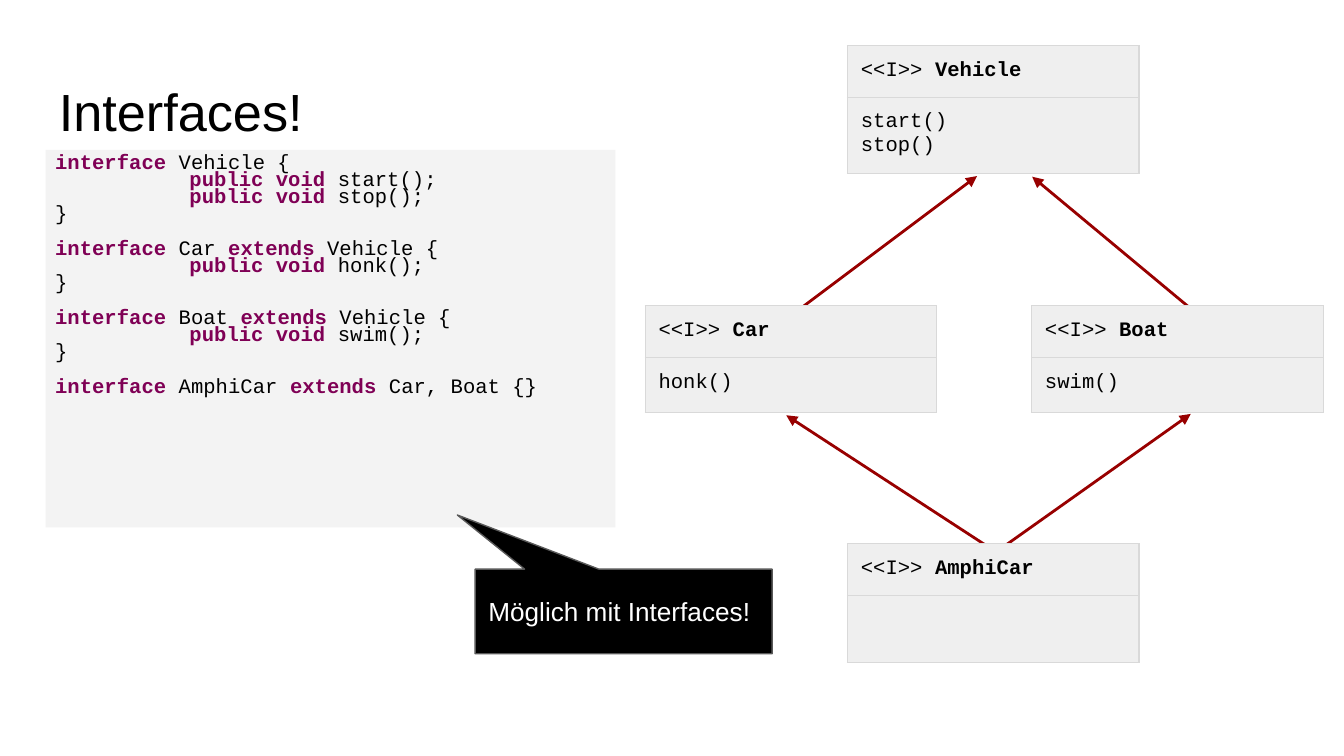
from lxml.etree import SubElement
from pptx import Presentation
from pptx.dml.color import RGBColor
from pptx.enum.shapes import MSO_CONNECTOR, MSO_SHAPE
from pptx.enum.text import MSO_ANCHOR, PP_ALIGN
from pptx.oxml.ns import qn
from pptx.util import Pt

PX = 4572  # EMU per px, 200 px to the inch

BLACK = RGBColor(0x00, 0x00, 0x00)
WHITE = RGBColor(0xFF, 0xFF, 0xFF)
KEYWORD = RGBColor(0x7F, 0x00, 0x55)
ARROW = RGBColor(0x98, 0x00, 0x00)
CODE_FILL = RGBColor(0xF3, 0xF3, 0xF3)
CLASS_FILL = RGBColor(0xEF, 0xEF, 0xEF)
CLASS_BORDER = RGBColor(0xD9, 0xD9, 0xD9)
CALLOUT_BORDER = RGBColor(0x59, 0x59, 0x59)

TITLE_FONT = {"name": "Arial", "size": Pt(28), "bold": False}
CALLOUT_FONT = {"name": "Arial", "size": Pt(14), "bold": False}
PLAIN_CODE = {"name": "Courier New", "size": Pt(11), "bold": False}
BOLD_CODE = {**PLAIN_CODE, "bold": True}
CODE_INDENT = 200

# Keywords stand between asterisks.
DECLARATIONS = [
    ["*interface* Vehicle {", "\t*public void* start();", "\t*public void* stop();", "}"],
    ["*interface* Car *extends* Vehicle {", "\t*public void* honk();", "}"],
    ["*interface* Boat *extends* Vehicle {", "\t*public void* swim();", "}"],
    ["*interface* AmphiCar *extends* Car, Boat {}"],
]

CLASS_WIDTH = 434
ROW_HEIGHTS = (42, 82)
FRAME_SIDE = 656
CLASSES = [
    (1261, 68, "Vehicle", ["start()", "stop()"]),
    (960, 455, "Car", ["honk()"]),
    (1535, 455, "Boat", ["swim()"]),
    (1261, 809, "AmphiCar", []),
]
ARROWS = [
    (1190, 460, 1454, 262),
    (1768, 456, 1536, 263),
    (1474, 816, 1170, 618),
    (1490, 816, 1772, 616),
]


def scaled(*lengths):
    return [length * PX for length in lengths]


def set_all(target, values):
    for name, value in values.items():
        setattr(target, name, value)


def add_span(para, text, font, color=BLACK):
    span = para.add_run()
    span.text = text
    set_all(span.font, font)
    span.font.color.rgb = color


def set_frame(frame, side, top, anchor=MSO_ANCHOR.TOP):
    """Wrap the text and set its insets, given in px."""
    set_all(frame, {
        "word_wrap": True, "vertical_anchor": anchor,
        "margin_left": side * PX, "margin_right": side * PX,
        "margin_top": top * PX, "margin_bottom": top * PX,
    })


def add_title(page, box, text):
    frame = page.shapes.add_textbox(*scaled(*box)).text_frame
    set_frame(frame, 20, 20)
    add_span(frame.paragraphs[0], text, TITLE_FONT)


def add_code(page, box, declarations):
    panel = page.shapes.add_textbox(*scaled(*box))
    panel.fill.solid()
    panel.fill.fore_color.rgb = CODE_FILL
    frame = panel.text_frame
    set_frame(frame, 14, 8)
    for index, lines in enumerate(declarations):
        para = frame.add_paragraph() if index else frame.paragraphs[0]
        set_all(para, {"line_spacing": 0.7, "space_before": Pt(9.25 if index else 0)})
        tabs = SubElement(para._p.get_or_add_pPr(), qn("a:tabLst"))
        SubElement(tabs, qn("a:tab"), pos=str(CODE_INDENT * PX), algn="l")
        for number, line in enumerate(lines):
            if number:
                para.add_line_break()
            for part, text in enumerate(line.split("*")):
                if text and part % 2:
                    add_span(para, text, BOLD_CODE, KEYWORD)
                elif text:
                    add_span(para, text, PLAIN_CODE)


def add_arrow(page, ends):
    arrow = page.shapes.add_connector(MSO_CONNECTOR.STRAIGHT, *scaled(*ends))
    arrow.line.color.rgb = ARROW
    arrow.line.width = Pt(1.5)
    SubElement(arrow.line._get_or_add_ln(), qn("a:tailEnd"), type="triangle")
    SubElement(arrow._element.spPr, qn("a:effectLst"))


def style_cell(cell):
    properties = cell._tc.get_or_add_tcPr()
    for side in ("a:lnL", "a:lnR", "a:lnT", "a:lnB"):
        border = SubElement(properties, qn(side), w=str(Pt(0.75)))
        fill = SubElement(border, qn("a:solidFill"))
        SubElement(fill, qn("a:srgbClr"), val=str(CLASS_BORDER))
    cell.fill.solid()
    cell.fill.fore_color.rgb = CLASS_FILL
    for side in ("left", "right", "top", "bottom"):
        setattr(cell, f"margin_{side}", 20 * PX)


def add_class(page, left, top, name, methods):
    """Place a class box: its name above its methods."""
    box = scaled(left, top, CLASS_WIDTH, sum(ROW_HEIGHTS))
    holder = page.shapes.add_table(2, 1, *box)
    table = holder.table
    set_all(table, {"first_row": False, "horz_banding": False})
    for row, height in zip(table.rows, ROW_HEIGHTS):
        row.height = height * PX
        style_cell(row.cells[0])
    # The frame is larger than its rows, so they keep their natural heights.
    set_all(holder, {"width": FRAME_SIDE * PX, "height": FRAME_SIDE * PX})
    heading = table.cell(0, 0).text_frame.paragraphs[0]
    add_span(heading, "<<I>> ", PLAIN_CODE)
    add_span(heading, name, BOLD_CODE)
    body = table.cell(1, 0).text_frame
    for index, method in enumerate(methods):
        para = body.add_paragraph() if index else body.paragraphs[0]
        add_span(para, method, PLAIN_CODE)


def add_callout(page, box, text):
    callout = page.shapes.add_shape(MSO_SHAPE.ROUNDED_RECTANGULAR_CALLOUT, *scaled(*box))
    callout.shadow.inherit = False
    for index, value in enumerate((-0.56, -1.14, 0)):
        callout.adjustments[index] = value
    callout.fill.solid()
    callout.fill.fore_color.rgb = BLACK
    callout.line.color.rgb = CALLOUT_BORDER
    callout.line.width = Pt(0.75)
    set_frame(callout.text_frame, 20, 20, MSO_ANCHOR.MIDDLE)
    para = callout.text_frame.paragraphs[0]
    para.alignment = PP_ALIGN.LEFT
    add_span(para, text, CALLOUT_FONT, WHITE)


def main():
    deck = Presentation()
    deck.slide_width, deck.slide_height = scaled(2000, 1125)
    page = deck.slides.add_slide(deck.slide_layouts[6])
    add_code(page, (68, 223, 848, 562), DECLARATIONS)
    add_title(page, (68, 98, 1864, 126), "Interfaces!")
    for ends in ARROWS:
        add_arrow(page, ends)
    for item in CLASSES:
        add_class(page, *item)
    add_callout(page, (707, 847, 442, 126), "Möglich mit Interfaces!")
    deck.save("out.pptx")


if __name__ == "__main__":
    main()
